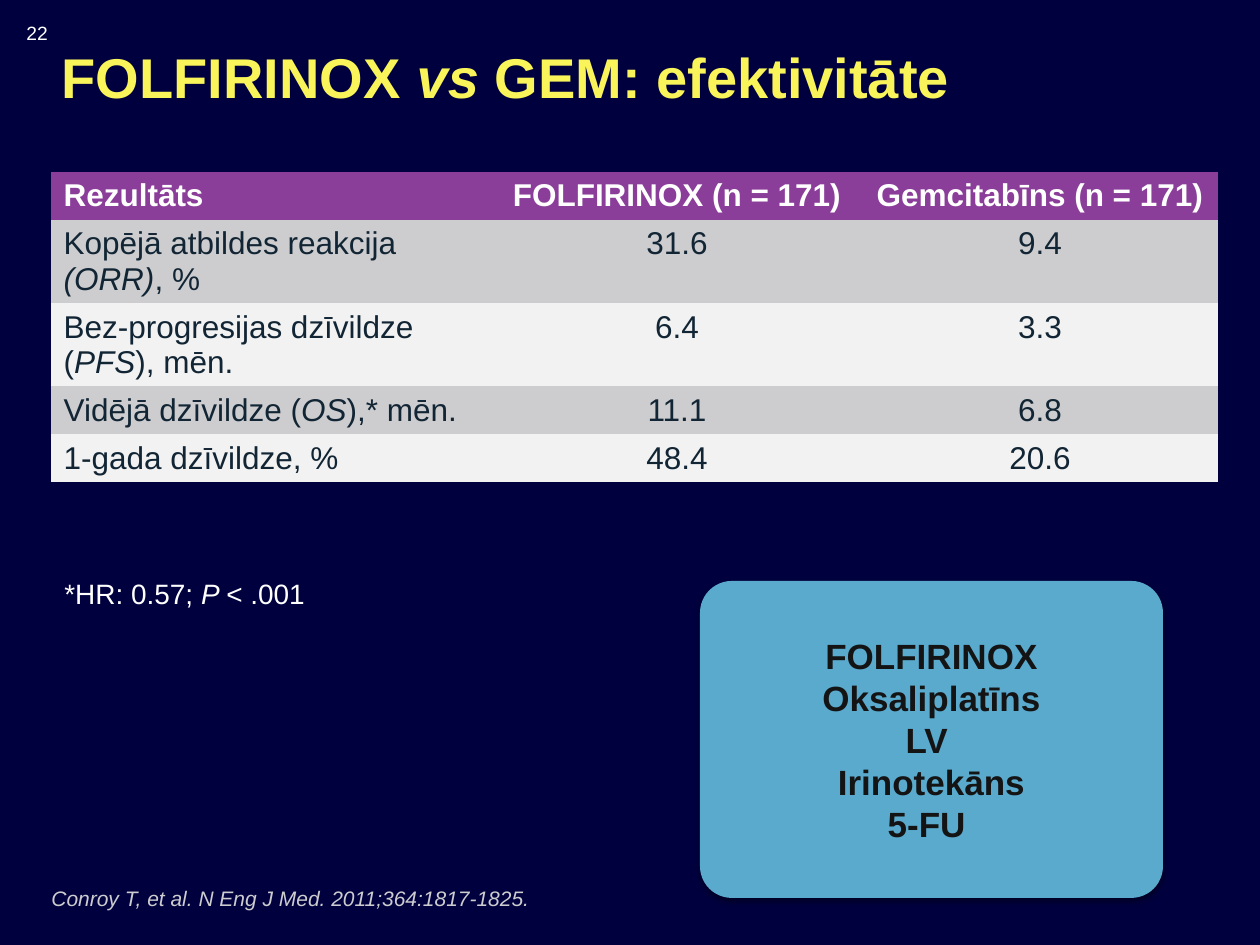
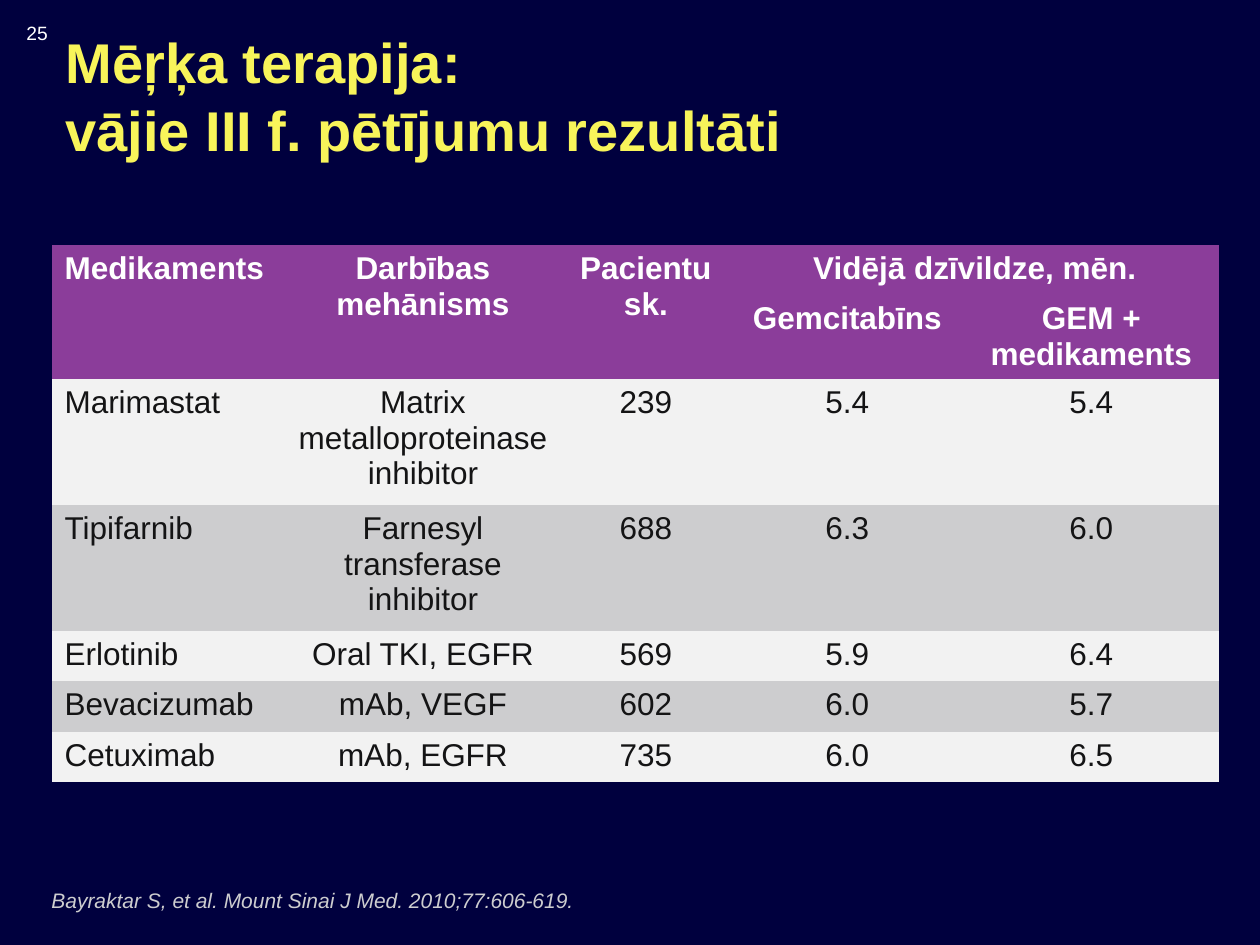
from dataclasses import dataclass

from lxml import etree
from pptx import Presentation
from pptx.dml.color import RGBColor
from pptx.enum.shapes import MSO_SHAPE
from pptx.enum.text import MSO_ANCHOR as ANCHOR, MSO_AUTO_SIZE as AUTO, PP_ALIGN as ALIGN
from pptx.oxml.ns import qn
from pptx.util import Emu, Pt

PX = 914400 / 126  # EMU in one px


@dataclass(frozen=True)
class Theme:
    font: str = "Arial"
    navy: str = "00003E"
    yellow: str = "F8F45A"
    purple: str = "8B3D9A"
    gray: str = "CDCDCF"
    light: str = "F2F2F2"
    white: str = "FFFFFF"
    slate: str = "122534"
    ink: str = "141415"
    blue: str = "5AAACE"
    title_pt: int = 32
    box_pt: int = 20
    table_pt: int = 18
    note_pt: int = 16
    cite_pt: int = 12
    number_pt: int = 11


T = Theme()


def px(*lengths):
    return [Emu(round(n * PX)) for n in lengths]


def write(p, text, size, color, bold=False, align=ALIGN.LEFT):
    """Add runs to a paragraph; _underscores_ mark italics, a newline a line break."""
    p.alignment = align
    for line_no, line in enumerate(text.split("\n")):
        if line_no:
            p.add_line_break()
        for i, part in enumerate(line.split("_")):
            if not part:
                continue
            r = p.add_run()
            r.text = part
            r.font.name = T.font
            r.font.size = Pt(size)
            r.font.bold = bold
            r.font.italic = i % 2 == 1
            r.font.color.rgb = RGBColor.from_string(color)


# Content of the slides; None marks a cell covered by a merge
slides = [
    dict(
        number="22",
        title="FOLFIRINOX _vs _GEM: efektivitāte",
        title_at=(49, 0),
        table_at=(51, 172),
        cols=(441, 370, 356),
        heights=(48, 83, 83, 48, 48),
        header_rows=1,
        merges=[],
        body_color=T.slate,
        rows=[
            ("Rezultāts", "FOLFIRINOX (n = 171)", "Gemcitabīns (n = 171)"),
            ("Kopējā atbildes reakcija _(ORR)_, %", "31.6", "9.4"),
            ("Bez-progresijas dzīvildze (_PFS_), mēn.", "6.4", "3.3"),
            ("Vidējā dzīvildze (_OS_),* mēn.", "11.1", "6.8"),
            ("1-gada dzīvildze, %", "48.4", "20.6"),
        ],
        cite="_Conroy T, et al. N Eng J Med. 2011;364:1817-1825._",
        cite_top=879,
    ),
    dict(
        number="25",
        title="Mēŗķa terapija: \nvājie III f. pētījumu rezultāti",
        title_at=(53, 19),
        table_at=(52, 245),
        cols=(233, 276, 170, 233, 255),
        heights=(50, 84, 126, 126, 50, 51, 50),
        header_rows=2,
        merges=[((0, 0), (1, 0)), ((0, 1), (1, 1)), ((0, 2), (1, 2)), ((0, 3), (0, 4))],
        body_color=T.ink,
        rows=[
            ("Medikaments", "Darbības mehānisms", "Pacientu sk.",
             "Vidējā dzīvildze, mēn.", None),
            (None, None, None, "Gemcitabīns", "GEM + medikaments"),
            ("Marimastat", "Matrix metalloproteinase inhibitor", "239", "5.4", "5.4"),
            ("Tipifarnib", "Farnesyl transferase inhibitor", "688", "6.3", "6.0"),
            ("Erlotinib", "Oral TKI, EGFR", "569", "5.9", "6.4"),
            ("Bevacizumab", "mAb, VEGF", "602", "6.0", "5.7"),
            ("Cetuximab", "mAb, EGFR", "735", "6.0", "6.5"),
        ],
        cite="_Bayraktar S, et al. Mount Sinai J Med. 2010;77:606-619._",
        cite_top=881,
    ),
]

# Deck and shared background
prs = Presentation()
prs.slide_width, prs.slide_height = px(1260, 945)
bg = prs.slide_master.background.fill
bg.solid()
bg.fore_color.rgb = RGBColor.from_string(T.navy)

for d in slides:
    s = prs.slides.add_slide(prs.slide_layouts[5])

    # Title
    sp = s.shapes.title
    sp.left, sp.top, sp.width, sp.height = px(*d["title_at"], 1167, 152)
    tf = sp.text_frame
    tf.auto_size = AUTO.NONE
    tf.vertical_anchor = ANCHOR.MIDDLE
    write(tf.paragraphs[0], d["title"], T.title_pt, T.yellow, bold=True)

    # Results table without borders
    frame = s.shapes.add_table(len(d["rows"]), len(d["cols"]),
                               *px(*d["table_at"], sum(d["cols"]), sum(d["heights"])))
    table = frame.table
    style = table._tbl.tblPr.find(qn("a:tableStyleId"))
    style.text = "{2D5ABB26-0587-4C30-8999-92F81FD0307C}"
    for col, width in zip(table.columns, px(*d["cols"])):
        col.width = width
    for row, height in zip(table.rows, px(*d["heights"])):
        row.height = height
    for first, last in d["merges"]:
        table.cell(*first).merge(table.cell(*last))

    for i, row in enumerate(d["rows"]):
        header = i < d["header_rows"]
        band = T.purple if header else T.gray if i % 2 else T.light
        for j, text in enumerate(row):
            cell = table.cell(i, j)
            cell.fill.solid()
            cell.fill.fore_color.rgb = RGBColor.from_string(band)
            if text is not None:
                write(cell.text_frame.paragraphs[0], text, T.table_pt,
                      T.white if header else d["body_color"], header,
                      ALIGN.CENTER if j else ALIGN.LEFT)

    # Slide number, citation and, on the first slide, the hazard ratio note
    labels = [
        (d["number"], (14, 15, 58, 37), T.number_pt, T.white, ANCHOR.TOP),
        (d["cite"], (39, d["cite_top"], 1179, 38), T.cite_pt, T.gray, ANCHOR.BOTTOM),
    ]
    if d is slides[0]:
        labels.append(("*HR: 0.57; _P _< .001", (52, 570, 270, 47),
                       T.note_pt, T.white, ANCHOR.TOP))
    for text, at, size, color, anchor in labels:
        tf = s.shapes.add_textbox(*px(*at)).text_frame
        tf.word_wrap = True
        tf.vertical_anchor = anchor
        write(tf.paragraphs[0], text, size, color)

# Box listing the parts of the regimen
sp = prs.slides[0].shapes.add_shape(MSO_SHAPE.ROUNDED_RECTANGLE, *px(700, 581, 463, 317))
sp.adjustments[0] = 0.1
sp.fill.solid()
sp.fill.fore_color.rgb = RGBColor.from_string(T.blue)
sp.line.fill.background()
sp.shadow.inherit = False
effects = sp._element.spPr.find(qn("a:effectLst"))
shadow = etree.SubElement(effects, qn("a:outerShdw"), blurRad=str(Pt(3.1)),
                          dist=str(Pt(1.6)), dir="5400000", rotWithShape="0")
black = etree.SubElement(shadow, qn("a:srgbClr"), val="000000")
etree.SubElement(black, qn("a:alpha"), val="38000")
tf = sp.text_frame
tf.word_wrap = True
tf.vertical_anchor = ANCHOR.MIDDLE
for i, drug in enumerate(("FOLFIRINOX", "Oksaliplatīns", "LV ", "Irinotekāns", "5-FU ")):
    p = tf.add_paragraph() if i else tf.paragraphs[0]
    write(p, drug, T.box_pt, T.ink, bold=True, align=ALIGN.CENTER)

prs.save("out.pptx")
